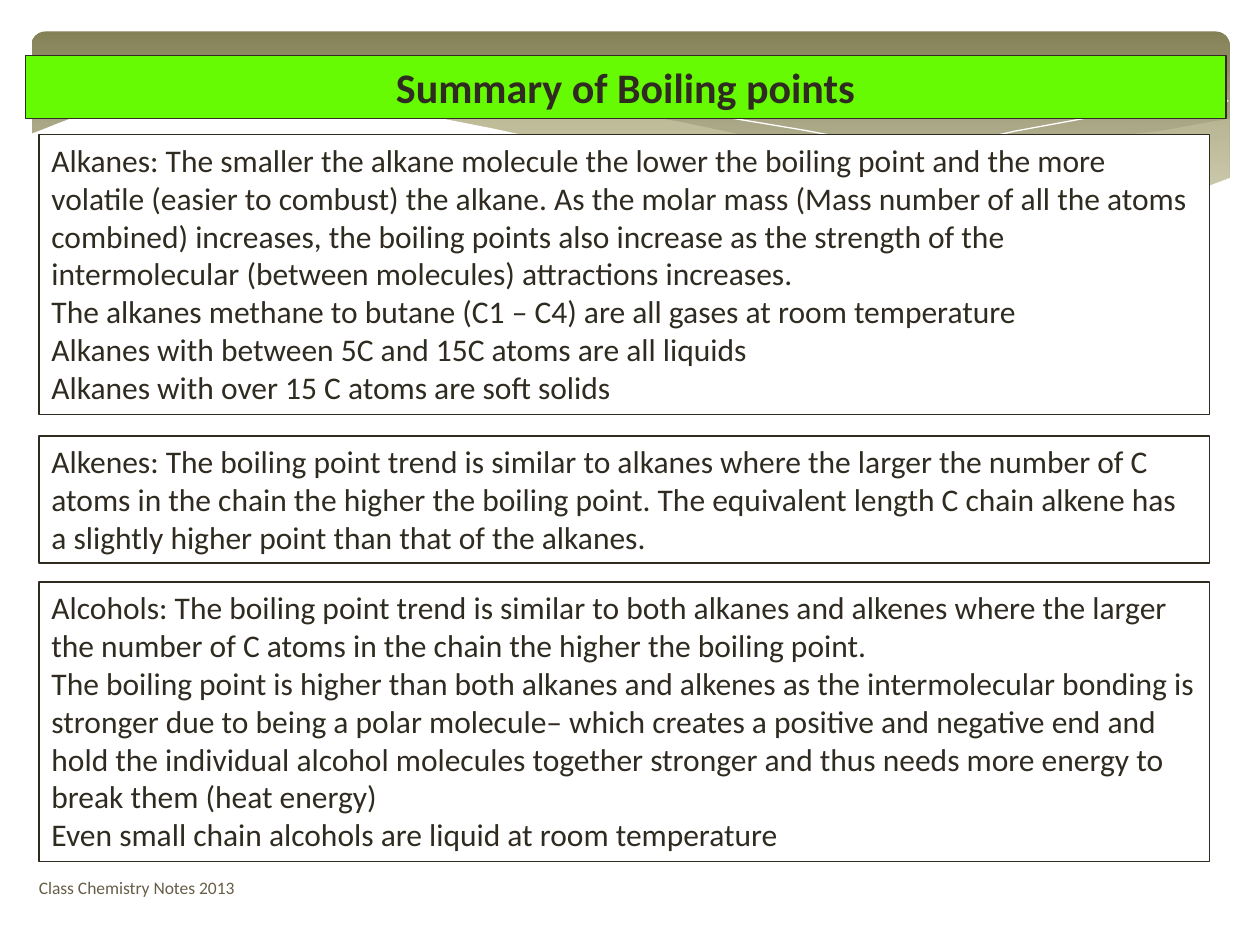
import pptx
import pptx.util
import pptx.oxml
import pptx.dml.color
import pptx.enum.shapes
import pptx.enum.text

RGBColor = pptx.dml.color.RGBColor
Pt = pptx.util.Pt
MSO_SHAPE = pptx.enum.shapes.MSO_SHAPE
MSO_ANCHOR = pptx.enum.text.MSO_ANCHOR
PP_ALIGN = pptx.enum.text.PP_ALIGN

INK = RGBColor(0x2F, 0x2B, 0x20)
BROWN = RGBColor(0x67, 0x5E, 0x47)
GREEN = RGBColor(0x67, 0xFB, 0x03)
WHITE = RGBColor(0xFF, 0xFF, 0xFF)
SAND = RGBColor(0xDF, 0xDC, 0xB7)
BAND_TOP = RGBColor(0x85, 0x81, 0x57)
BAND_BOTTOM = RGBColor(0xCB, 0xC9, 0xB0)

COLUMNS, ROWS = 100, 75  # grid laid over the slide

# Waves of the header band, as (column, row) points
RIGHT_WAVE = [
    (97.6, 9.4), (94.8, 9.9), (92.1, 10.4), (89.1, 10.7), (86.1, 11.8), (80.5, 13.1),
    (75.3, 14.3), (70.6, 15.2), (66.1, 16), (70.5, 16.5), (74.5, 16.9), (79.2, 17.2),
    (83.5, 17.2), (87.2, 16.9), (90.5, 16.3), (93.5, 15.6), (96.3, 14.7), (97.6, 14.1)]
MIDDLE_WAVE = [
    (89.3, 16.7), (83.7, 15.9), (77.5, 14.9), (70.6, 13.4), (62.9, 11.6), (58.4, 10.6),
    (54.1, 9.7), (50.2, 9), (46.5, 8.6), (42, 8.2), (38, 8), (34.4, 8), (31.3, 8.2),
    (28.6, 8.6), (32.3, 9), (36.2, 9.7), (40.4, 10.6), (44.9, 11.6), (53, 13.5),
    (60.1, 15), (66.5, 16.1), (72.2, 16.8), (77.3, 17.2), (81.8, 17.3), (85.7, 17.1)]
FALLING_LINE = [
    (30.9, 9), (33.5, 8.5), (37.4, 8.2), (41.6, 8.1), (46.9, 8.3), (53.3, 8.8),
    (58.2, 9.4), (63.6, 10.3), (69.5, 11.4), (76, 12.8), (83.1, 14.5), (90.7, 16.6)]
RISING_LINE = [
    (61.3, 15.1), (65.3, 14.1), (69.5, 13), (74.8, 11.7), (80.6, 10.4), (86.6, 9.3),
    (91, 8.6), (95.1, 8.2), (97.5, 8)]
WHITE_WAVE = [
    (97.7, 14.1), (95, 15.1), (92, 15.9), (88.7, 16.6), (85, 17), (80.9, 17.1),
    (76.1, 17), (70.8, 16.5), (64.8, 15.6), (57.9, 14.4), (50.3, 12.8), (44.7, 11.4),
    (39.1, 10.2), (34, 9.2), (29.2, 8.5), (25, 8.1), (21.1, 7.8), (17.7, 7.8),
    (14.6, 7.9), (11.9, 8.2), (9.5, 8.5), (7.6, 8.9), (5.9, 9.3), (4.6, 9.8),
    (3.6, 10.2), (2.3, 10.7), (2.3, 22.4), (97.7, 22.4)]

TEXT_BOXES = [  # top row, height in rows, paragraphs
    (10.7, 22.2, [
        "Alkanes: The smaller the alkane molecule the lower the boiling point and the more "
        "volatile (easier to combust) the alkane. As the molar mass (Mass number of all the "
        "atoms combined) increases, the boiling points also increase as the strength of the "
        "intermolecular (between molecules) attractions increases.",
        "The alkanes methane to butane (C1 – C4) are all gases at room temperature",
        "Alkanes with between 5C and 15C atoms are all liquids",
        "Alkanes with over 15 C atoms are soft solids"]),
    (34.6, 10.1, [
        "Alkenes: The boiling point trend is similar to alkanes where the larger the number "
        "of C atoms in the chain the higher the boiling point. The equivalent length C chain "
        "alkene has a slightly higher point than that of the alkanes."]),
    (46.2, 22.2, [
        "Alcohols: The boiling point trend is similar to both alkanes and alkenes where the "
        "larger the number of C atoms in the chain the higher the boiling point.",
        "The boiling point is higher than both alkanes and alkenes as the intermolecular "
        "bonding is stronger due to being a polar molecule– which creates a positive and "
        "negative end and hold the individual alcohol molecules together stronger and thus "
        "needs more energy to break them (heat energy)",
        "Even small chain alcohols are liquid at room temperature"]),
]


def write(tf, *paragraphs, size=18, color=INK, bold=False, align=PP_ALIGN.LEFT,
          anchor=MSO_ANCHOR.TOP):
    tf.word_wrap = True
    tf.auto_size = pptx.enum.text.MSO_AUTO_SIZE.NONE
    tf.vertical_anchor = anchor
    for i, text in enumerate(paragraphs):
        p = tf.add_paragraph() if i else tf.paragraphs[0]
        p.alignment = align
        r = p.add_run()
        r.text = text
        r.font.name = "Calibri"
        r.font.size = Pt(size)
        r.font.bold = bold
        r.font.color.rgb = color


class Deck:
    def __init__(self):
        self.prs = pptx.Presentation()
        self.prs.slide_width = pptx.util.Inches(10)
        self.prs.slide_height = pptx.util.Inches(7.5)
        self.s = self.prs.slides.add_slide(self.prs.slide_layouts[5])

    def x(self, columns):
        return round(self.prs.slide_width * columns / COLUMNS)

    def y(self, rows):
        return round(self.prs.slide_height * rows / ROWS)

    def area(self, left, top, width, height):
        return self.x(left), self.y(top), self.x(width), self.y(height)

    def paint(self, sp, fill, line=INK):
        sp.fill.solid()
        sp.fill.fore_color.rgb = fill
        if line is None:
            sp.line.fill.background()
        else:
            sp.line.color.rgb = line
            sp.line.width = Pt(0.75)

    def band(self, *area):
        sp = self.s.shapes.add_shape(MSO_SHAPE.ROUNDED_RECTANGLE, *self.area(*area))
        sp.adjustments[0] = 0.07
        sp.shadow.inherit = False
        sp.line.fill.background()
        sp.fill.gradient()
        sp.fill.gradient_angle = 270
        for stop, position, color in zip(sp.fill.gradient_stops, (0, 0.9),
                                         (BAND_TOP, BAND_BOTTOM)):
            stop.position = position
            stop.color.rgb = color

    def outline(self, points, close):
        (x0, y0), *rest = [(self.x(c), self.y(r)) for c, r in points]
        builder = self.s.shapes.build_freeform(x0, y0)
        builder.add_line_segments(rest, close=close)
        sp = builder.convert_to_shape()
        sp.shadow.inherit = False
        return sp

    def wave(self, points, color, opacity=100):
        sp = self.outline(points, True)
        self.paint(sp, color, None)
        if opacity < 100:
            srgb = sp.fill._xPr.solidFill[0]
            alpha = pptx.oxml.parse_xml(
                '<a:alpha xmlns:a="http://schemas.openxmlformats.org/drawingml/2006/main"'
                f' val="{opacity * 1000}"/>')
            srgb.append(alpha)

    def curve(self, points):
        sp = self.outline(points, False)
        sp.fill.background()
        sp.line.color.rgb = WHITE
        sp.line.width = Pt(0)

    def title(self, text, *area):
        sp = self.s.shapes.title
        self.s.shapes._spTree.append(sp._element)  # in front of the band
        sp.left, sp.top, sp.width, sp.height = self.area(*area)
        self.paint(sp, GREEN)
        write(sp.text_frame, text, size=24, bold=True, align=PP_ALIGN.CENTER)

    def text(self, paragraphs, *area, framed=True, **style):
        sp = self.s.shapes.add_textbox(*self.area(*area))
        if framed:
            self.paint(sp, WHITE)
        write(sp.text_frame, *paragraphs, **style)


def main():
    deck = Deck()
    deck.band(2.5, 2.5, 95.1, 15.6)
    deck.wave(RIGHT_WAVE, SAND, 29)
    deck.wave(MIDDLE_WAVE, SAND, 40)
    deck.curve(FALLING_LINE)
    deck.curve(RISING_LINE)
    deck.wave(WHITE_WAVE, WHITE)
    deck.text(["Class Chemistry Notes 2013"], 2.1, 68.4, 41.4, 4, framed=False,
              size=10, color=BROWN, anchor=MSO_ANCHOR.MIDDLE)
    deck.title("Summary of Boiling points", 2, 4.4, 95.3, 5)
    for top, height, paragraphs in TEXT_BOXES:
        deck.text(paragraphs, 3.1, top, 92.9, height)
    deck.prs.save("out.pptx")


if __name__ == "__main__":
    main()
